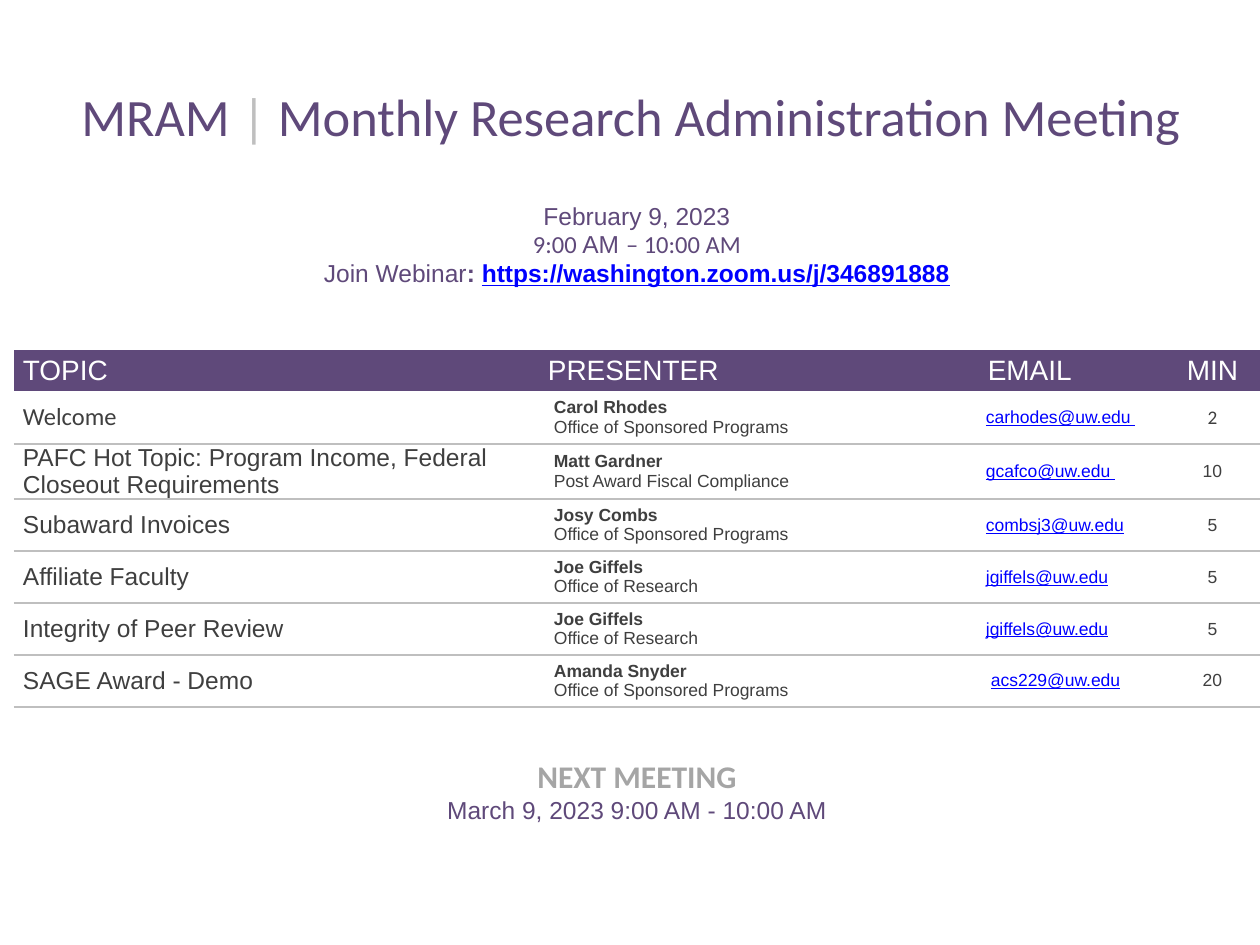
from lxml.etree import SubElement
from pptx import Presentation
from pptx.dml.color import RGBColor
from pptx.enum.text import MSO_ANCHOR as Anchor, PP_ALIGN as Align
from pptx.oxml import parse_xml
from pptx.oxml.ns import nsdecls, qn
from pptx.util import Emu, Pt

PX = 914400 // 126
PURPLE = RGBColor(0x5F, 0x49, 0x7A)
SILVER = RGBColor(0xBF, 0xBF, 0xBF)
GRAY = RGBColor(0xA5, 0xA5, 0xA5)
DARK = RGBColor(0x3F, 0x3F, 0x3F)
BLUE = RGBColor(0x00, 0x00, 0xFF)
WHITE = RGBColor(0xFF, 0xFF, 0xFF)
NO_GRID = "{2D5ABB26-0587-4C30-8999-92F81FD0307C}"

COLUMNS = [525, 432, 194, 95]
ROWS = [78, 199, 41, 53, 55, 52, 52, 52, 52, 118]
HEADINGS = [
    ("TOPIC", 9, Align.LEFT),
    ("PRESENTER", 9, Align.LEFT),
    ("EMAIL", 17, Align.LEFT),
    ("MIN", 9, Align.CENTER),
]
SPONSORED = "Office of Sponsored Programs"
RESEARCH = "Office of Research"
AGENDA = [
    ("Welcome", "Carol Rhodes", SPONSORED, "carhodes@uw.edu ", "2"),
    ("PAFC Hot Topic: Program Income, Federal Closeout Requirements",
     "Matt Gardner", "Post Award Fiscal Compliance", "gcafco@uw.edu ", "10"),
    ("Subaward Invoices", "Josy Combs", SPONSORED, "combsj3@uw.edu", "5"),
    ("Affiliate Faculty", "Joe Giffels", RESEARCH, "jgiffels@uw.edu", "5"),
    ("Integrity of Peer Review", "Joe Giffels", RESEARCH, "jgiffels@uw.edu", "5"),
    ("SAGE Award - Demo", "Amanda Snyder", SPONSORED, "acs229@uw.edu", "20"),
]


def px(length):
    return Emu(length * PX)


def style_font(font, size=None, name=None, color=None, bold=None, underline=None):
    if size:
        font.size = Pt(size)
    if name:
        font.name = name
    if color is not None:
        font.color.rgb = color
    if bold is not None:
        font.bold = bold
    if underline is not None:
        font.underline = underline


def add_para(cell, spans, size, color, name="Arial", align=Align.LEFT, **style):
    frame = cell.text_frame
    para = frame.paragraphs[0]
    if para.runs:
        para = frame.add_paragraph()
    para.alignment = align
    style_font(para.font, size, name, color, **style)
    for text, changes in spans:
        span = para.add_run()
        span.text = text
        style_font(span.font, **changes)


def add_line(cell, text, size, color, **style):
    add_para(cell, [(text, {})], size, color, **style)


def format_cell(cell, fill=WHITE, anchor=Anchor.MIDDLE, side=9, top=0, bottom=0):
    cell.fill.solid()
    cell.fill.fore_color.rgb = fill
    cell.vertical_anchor = anchor
    cell.margin_left = px(side)
    cell.margin_right = px(9)
    cell.margin_top = px(top)
    cell.margin_bottom = px(bottom)


def add_rule(cell):
    line = parse_xml(f'<a:lnB {nsdecls("a")} w="12700"/>')
    fill = SubElement(line, qn("a:solidFill"))
    SubElement(fill, qn("a:srgbClr"), val=str(SILVER))
    cell._tc.get_or_add_tcPr().insert(0, line)


def add_grid(page):
    frame = page.shapes.add_table(
        len(ROWS), len(COLUMNS), px(14), px(73), px(sum(COLUMNS)), px(sum(ROWS)))
    table = frame.table
    table.first_row = False
    table.horz_banding = False
    table._tbl.tblPr.find(qn("a:tableStyleId")).text = NO_GRID
    for column, width in zip(table.columns, COLUMNS):
        column.width = px(width)
    for row, height in zip(table.rows, ROWS):
        row.height = px(height)
    return table


def merge_row(table, row, **layout):
    cell = table.cell(row, 0)
    cell.merge(table.cell(row, len(COLUMNS) - 1))
    format_cell(cell, **layout)
    return cell


def fill_intro(table):
    title = merge_row(table, 0, anchor=Anchor.BOTTOM)
    add_para(title, [
        ("MRAM ", {}),
        ("|", {"color": SILVER}),
        (" Monthly Research Administration Meeting ", {}),
    ], 30, PURPLE, name="Calibri", align=Align.CENTER)

    details = merge_row(table, 1, anchor=Anchor.BOTTOM, bottom=62)
    add_line(details, "February 9, 2023", 14, PURPLE, align=Align.CENTER)
    add_para(details, [
        ("9:00 ", {"name": "Calibri"}),
        ("AM ", {"name": "Arial"}),
        ("– 10:00 AM", {"name": "Calibri"}),
    ], 14, PURPLE, align=Align.CENTER)
    add_para(details, [
        ("Join Webinar", {}),
        (": ", {"bold": True}),
        ("https://washington.zoom.us/j/346891888",
         {"bold": True, "color": BLUE, "underline": True}),
    ], 14, PURPLE, align=Align.CENTER)


def fill_headings(table):
    for column, (text, side, align) in enumerate(HEADINGS):
        cell = table.cell(2, column)
        format_cell(cell, fill=PURPLE, side=side)
        add_line(cell, text, 16, WHITE, align=align)


def fill_agenda(table):
    for index, (topic, presenter, office, email, minutes) in enumerate(AGENDA):
        cells = [table.cell(index + 3, column) for column in range(len(COLUMNS))]
        last = index == len(AGENDA) - 1
        for cell, side in zip(cells, [9, 15, 20 if last else 15, 9]):
            format_cell(cell, side=side)
            add_rule(cell)
        name, size = ("Calibri", 11) if index == 0 else ("Arial", 10)
        add_line(cells[0], topic, 14, DARK, name=name)
        add_line(cells[1], presenter, 10, DARK, bold=True)
        add_line(cells[1], office, 10, DARK)
        add_line(cells[2], email, 10, BLUE, underline=True)
        add_line(cells[3], minutes, size, DARK, name=name, align=Align.CENTER)


def fill_next_meeting(table):
    cell = merge_row(table, len(ROWS) - 1, anchor=Anchor.TOP, top=52)
    add_line(cell, "NEXT MEETING", 18, GRAY, name="Calibri",
             align=Align.CENTER, bold=True)
    add_line(cell, "March 9, 2023 9:00 AM - 10:00 AM", 14, PURPLE,
             align=Align.CENTER)


def main():
    deck = Presentation()
    deck.slide_width = px(1260)
    deck.slide_height = px(945)
    page = deck.slides.add_slide(deck.slide_layouts[6])
    table = add_grid(page)
    fill_intro(table)
    fill_headings(table)
    fill_agenda(table)
    fill_next_meeting(table)
    deck.save("out.pptx")


if __name__ == "__main__":
    main()
